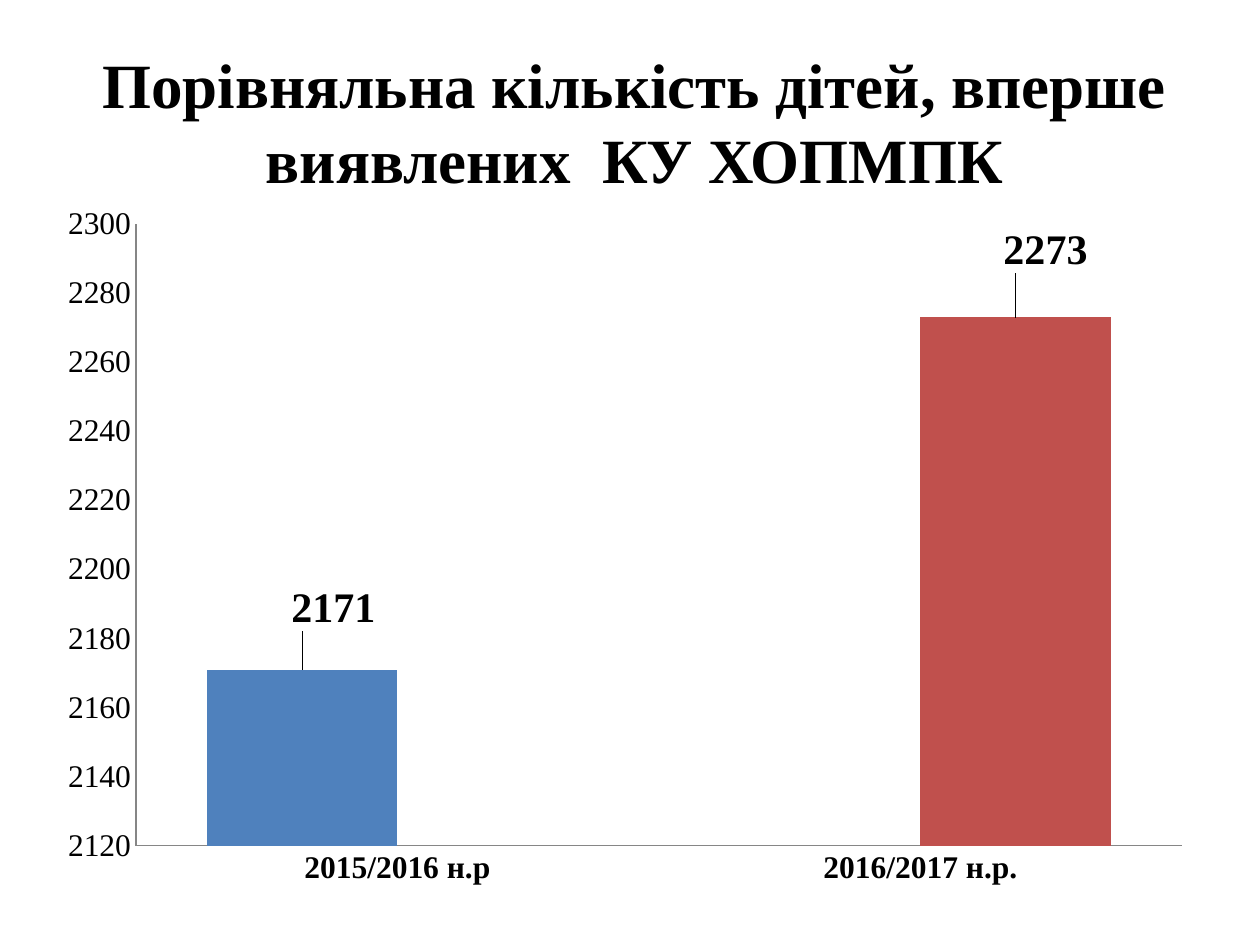
from lxml import etree
from pptx import Presentation
from pptx.chart.data import CategoryChartData
from pptx.dml.color import RGBColor
from pptx.enum.chart import XL_CHART_TYPE, XL_LABEL_POSITION, XL_TICK_MARK
from pptx.enum.text import MSO_ANCHOR, PP_ALIGN
from pptx.oxml.ns import qn
from pptx.util import Emu, Pt

COLUMNS = XL_CHART_TYPE.COLUMN_CLUSTERED
OUTSIDE_END = XL_LABEL_POSITION.OUTSIDE_END
NO_TICK = XL_TICK_MARK.NONE
MIDDLE = MSO_ANCHOR.MIDDLE
CENTER = PP_ALIGN.CENTER

PX_PER_INCH = 126
SERIF = "Times New Roman"
BLACK = "000000"
AXIS_GREY = "868686"
YEARS = ["2015/2016 н.р", "2016/2017 н.р."]
COUNTS = [2171, 2273]
BAR_COLORS = ["4F81BD", "C0504D"]
LABEL_SHIFTS = [(31, -33), (30, -39)]


def px(length):
    return Emu(round(length * 914400 / PX_PER_INCH))


def rgb(code):
    return RGBColor.from_string(code)


def style_font(font, size, bold, name=SERIF):
    font.name = name
    font.size = Pt(size)
    font.bold = bold
    font.color.rgb = rgb(BLACK)


def manual_layout(settings):
    layout = etree.Element(qn("c:layout"))
    manual = etree.SubElement(layout, qn("c:manualLayout"))
    for tag, value in settings.items():
        etree.SubElement(manual, qn(f"c:{tag}")).set("val", str(value))
    return layout


def add_heading(slide, box):
    heading = slide.shapes.title
    heading.left, heading.top, heading.width, heading.height = map(px, box)
    frame = heading.text_frame
    frame.text = "Порівняльна кількість дітей, вперше виявлених  КУ ХОПМПК"
    frame.word_wrap = True
    frame.vertical_anchor = MIDDLE
    paragraph = frame.paragraphs[0]
    paragraph.alignment = CENTER
    style_font(paragraph.font, 36, True)


def style_axis(axis, bold):
    axis.major_tick_mark = NO_TICK
    axis.minor_tick_mark = NO_TICK
    axis.has_major_gridlines = False
    axis.format.line.color.rgb = rgb(AXIS_GREY)
    style_font(axis.tick_labels.font, 18, bold)


def place_plot(chart, width, height):
    area = chart._chartSpace.find(".//" + qn("c:plotArea"))
    for old in area.findall(qn("c:layout")):
        area.remove(old)
    area.insert(0, manual_layout({
        "layoutTarget": "inner", "xMode": "edge", "yMode": "edge",
        "x": 92 / width, "y": 31 / height,
        "w": 1046 / width, "h": 622 / height}))


def label_bar(series, index, width, height):
    label = series.points[index].data_label
    style_font(label.font, 24, True)
    label.position = OUTSIDE_END
    shift_x, shift_y = LABEL_SHIFTS[index]
    label_index = series._element.find(".//" + qn("c:dLbl") + "/" + qn("c:idx"))
    label_index.addnext(manual_layout({"x": shift_x / width, "y": shift_y / height}))


def add_comparison(slide, box):
    width, height = box[2:]
    data = CategoryChartData()
    data.categories = YEARS
    for year, count in enumerate(COUNTS):
        data.add_series(f"Series {year + 1}",
                        [count if slot == year else None for slot in range(len(YEARS))])
    chart = slide.shapes.add_chart(COLUMNS, *map(px, box), data).chart
    chart.has_legend = False
    chart.has_title = False
    style_font(chart.font, 18, False, "Calibri")
    style_axis(chart.category_axis, True)
    style_axis(chart.value_axis, False)
    chart.value_axis.minimum_scale = 2120
    chart.value_axis.maximum_scale = 2300
    chart.value_axis.major_unit = 20
    place_plot(chart, width, height)

    plot = chart.plots[0]
    plot.gap_width = 75
    plot.overlap = 0
    plot.vary_by_categories = False
    for index, series in enumerate(plot.series):
        series.format.fill.solid()
        series.format.fill.fore_color.rgb = rgb(BAR_COLORS[index])
        label_bar(series, index, width, height)


def main():
    deck = Presentation()
    deck.slide_width, deck.slide_height = px(1260), px(945)
    slide = deck.slides.add_slide(deck.slide_layouts[5])
    add_comparison(slide, (44, 193, 1160, 707))
    add_heading(slide, (63, 38, 1143, 166))
    deck.save("out.pptx")


if __name__ == "__main__":
    main()
